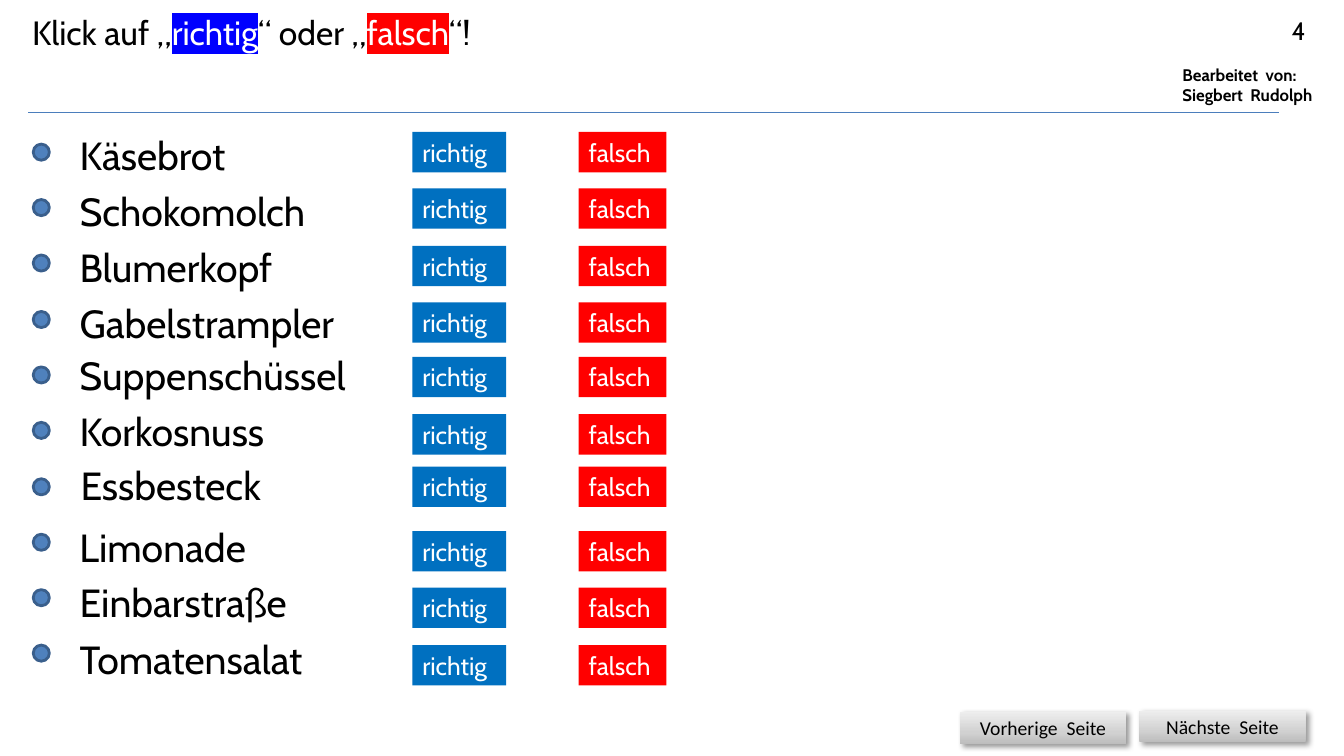
from lxml import etree
from pptx import Presentation
from pptx.dml.color import RGBColor
from pptx.enum.shapes import MSO_CONNECTOR, MSO_SHAPE
from pptx.enum.text import MSO_ANCHOR, MSO_AUTO_SIZE, PP_ALIGN
from pptx.oxml import parse_xml
from pptx.oxml.ns import qn
from pptx.util import Emu, Pt

RECTANGLE, OVAL = MSO_SHAPE.RECTANGLE, MSO_SHAPE.OVAL
STRAIGHT = MSO_CONNECTOR.STRAIGHT
TOP, MIDDLE = MSO_ANCHOR.TOP, MSO_ANCHOR.MIDDLE
LEFT, CENTER, RIGHT = PP_ALIGN.LEFT, PP_ALIGN.CENTER, PP_ALIGN.RIGHT
FIT_SHAPE, NO_FIT = MSO_AUTO_SIZE.SHAPE_TO_FIT_TEXT, MSO_AUTO_SIZE.NONE

BLACK = RGBColor(0x00, 0x00, 0x00)
WHITE = RGBColor(0xFF, 0xFF, 0xFF)
RED = RGBColor(0xFF, 0x00, 0x00)
BLUE = RGBColor(0x00, 0x00, 0xFF)
BUTTON_BLUE = RGBColor(0x00, 0x70, 0xC0)
DOT_FILL = RGBColor(0x4F, 0x81, 0xBD)
DOT_LINE = RGBColor(0x3A, 0x5F, 0x8C)
RULE_BLUE = RGBColor(0x4B, 0x7E, 0xBC)
GREY_STOPS = [
    (0, RGBColor(0xBD, 0xBD, 0xBD)),
    (35, RGBColor(0xD1, 0xD1, 0xD1)),
    (100, RGBColor(0xEE, 0xEE, 0xEE)),
]

EMU_PER_PX = 9144  # 100 px to the inch
NAMESPACE = 'xmlns:a="http://schemas.openxmlformats.org/drawingml/2006/main"'

# word, left, top, width, top of its buttons
ROWS = [
    ("Käsebrot", 69, 125, 175, 131),
    ("Schokomolch", 69, 181, 248, 187),
    ("Blumerkopf", 69, 236, 222, 244),
    ("Gabelstrampler", 69, 292, 292, 300),
    ("Suppenschüssel", 69, 344, 290, 354),
    ("Korkosnuss", 69, 399, 209, 411),
    ("Essbesteck", 70, 453, 209, 463),
    ("Limonade", 69, 514, 190, 527),
    ("Einbarstraße", 69, 569, 242, 583),
    ("Tomatensalat", 69, 625, 255, 640),
]
ANSWERS = [("richtig", 409, 93, BUTTON_BLUE), ("falsch", 574, 87, RED)]
TITLE = [
    ("Klick auf „", BLACK, None),
    ("richtig", WHITE, BLUE),
    ("“ oder „", BLACK, None),
    ("falsch", WHITE, RED),
    ("“!", BLACK, None),
]


def px(*lengths):
    return [Emu(length * EMU_PER_PX) for length in lengths]


class SlideBuilder:
    def __init__(self, slide, font_name):
        self.slide = slide
        self.font_name = font_name

    def style_run(self, run, size, color, bold=False, font_name=None):
        run.font.name = font_name or self.font_name
        run.font.size = Pt(size)
        run.font.bold = bold
        run.font.color.rgb = color

    def fill_text(self, shape, text, size, color, bold=False, align=LEFT,
                  anchor=TOP, wrap=False, fit=FIT_SHAPE, font_name=None):
        frame = shape.text_frame
        frame.text = text
        frame.word_wrap = wrap
        frame.auto_size = fit
        frame.vertical_anchor = anchor
        for paragraph in frame.paragraphs:
            paragraph.alignment = align
            for run in paragraph.runs:
                self.style_run(run, size, color, bold, font_name)

    def text(self, box, text, size, **options):
        shape = self.slide.shapes.add_textbox(*px(*box))
        self.fill_text(shape, text, size, BLACK, **options)

    def highlighted_text(self, box, parts, size):
        """Set one line from (text, colour, highlight or None) parts."""
        frame = self.slide.shapes.add_textbox(*px(*box)).text_frame
        frame.word_wrap = True
        frame.auto_size = FIT_SHAPE
        for text, color, highlight in parts:
            run = frame.paragraphs[0].add_run()
            run.text = text
            self.style_run(run, size, color)
            if highlight is not None:
                fill = run._r.get_or_add_rPr().find(qn("a:solidFill"))
                fill.addnext(parse_xml(
                    f'<a:highlight {NAMESPACE}><a:srgbClr val="{highlight}"/>'
                    "</a:highlight>"))

    def shape(self, kind, box, fill=None, line=None, line_width=0):
        shape = self.slide.shapes.add_shape(kind, *px(*box))
        shape.shadow.inherit = False
        if fill is None:
            shape.fill.background()
        else:
            shape.fill.solid()
            shape.fill.fore_color.rgb = fill
        if line is None:
            shape.line.fill.background()
        else:
            shape.line.color.rgb = line
            shape.line.width = Pt(line_width)
        return shape

    def answer_button(self, box, text, fill):
        self.fill_text(self.shape(RECTANGLE, box, fill), text, 18, WHITE)

    def page_button(self, box, text):
        """Draw a grey gradient button with a soft shadow."""
        shape = self.shape(RECTANGLE, box)
        properties = shape._element.spPr
        stops = "".join(
            f'<a:gs pos="{place * 1000}"><a:srgbClr val="{color}"/></a:gs>'
            for place, color in GREY_STOPS)
        properties.replace(properties.find(qn("a:noFill")), parse_xml(
            f"<a:gradFill {NAMESPACE}><a:gsLst>{stops}</a:gsLst>"
            '<a:lin ang="16200000" scaled="0"/></a:gradFill>'))
        properties.find(qn("a:effectLst")).append(parse_xml(
            f'<a:outerShdw {NAMESPACE} blurRad="{Pt(4)}" dist="{Pt(3)}" '
            'dir="2700000" algn="tl" rotWithShape="0">'
            f'<a:srgbClr val="{BLACK}"><a:alpha val="40000"/></a:srgbClr>'
            "</a:outerShdw>"))
        self.fill_text(shape, text, 14, BLACK, align=CENTER, anchor=MIDDLE,
                       wrap=True, fit=NO_FIT, font_name="Calibri")

    def line(self, ends, color, width):
        connector = self.slide.shapes.add_connector(STRAIGHT, *px(*ends))
        connector.line.color.rgb = color
        connector.line.width = Pt(width)
        etree.SubElement(connector._element.spPr, qn("a:effectLst"))


def main():
    presentation = Presentation()
    presentation.slide_width, presentation.slide_height = px(1333, 750)
    slide = presentation.slides.add_slide(presentation.slide_layouts[6])
    builder = SlideBuilder(slide, "Cabin")

    builder.line((28, 112, 1269, 112), RULE_BLUE, 0.75)
    builder.page_button((952, 706, 165, 32), "Vorherige  Seite")
    builder.page_button((1130, 705, 165, 31), "Nächste  Seite")
    builder.text((1163, 59, 160, 50), "Bearbeitet  von:\nSiegbert  Rudolph",
                 12, bold=True)
    builder.text((1005, 10, 300, 40), "4", 18, align=RIGHT, wrap=True,
                 fit=NO_FIT)
    builder.highlighted_text((22, 7, 967, 50), TITLE, 24)

    for index, (word, left, top, width, button_top) in enumerate(ROWS):
        dot_top = 143 + round(index * 55.25)
        builder.shape(OVAL, (33, dot_top, 16, 16), DOT_FILL, DOT_LINE, 2)
        builder.text((left, top, width, 57), word, 28)
        for answer, answer_left, answer_width, fill in ANSWERS:
            builder.answer_button((answer_left, button_top, answer_width, 40),
                                  answer, fill)

    presentation.save("out.pptx")


if __name__ == "__main__":
    main()
